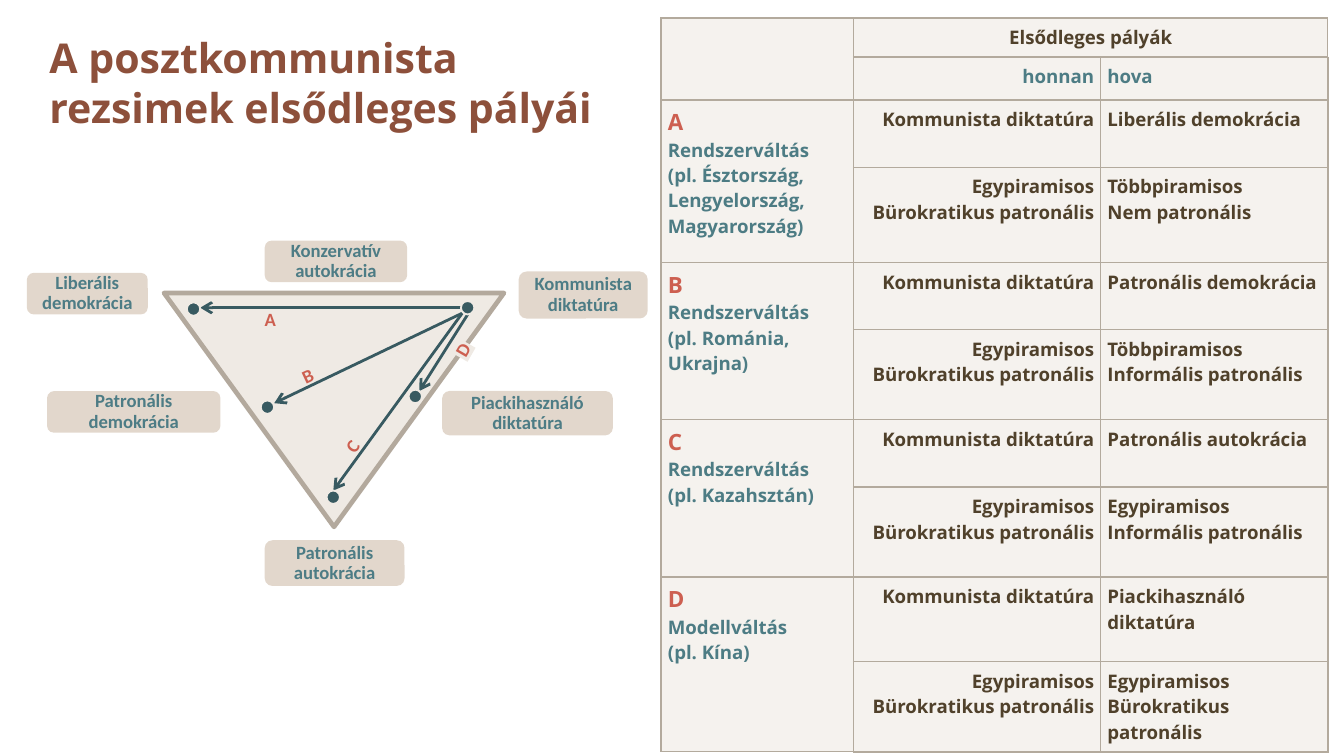
"""Build the slide on the primary trajectories of post-communist regimes."""
from dataclasses import dataclass

from lxml import etree
from pptx import Presentation
from pptx.dml.color import RGBColor
from pptx.enum.shapes import MSO_CONNECTOR, MSO_SHAPE
from pptx.enum.text import MSO_ANCHOR, PP_ALIGN
from pptx.oxml.ns import qn
from pptx.util import Emu, Inches, Pt

LEFT, CENTER, RIGHT = PP_ALIGN.LEFT, PP_ALIGN.CENTER, PP_ALIGN.RIGHT
TOP, MIDDLE = MSO_ANCHOR.TOP, MSO_ANCHOR.MIDDLE
STRAIGHT = MSO_CONNECTOR.STRAIGHT
TRIANGLE, RECTANGLE = MSO_SHAPE.ISOSCELES_TRIANGLE, MSO_SHAPE.RECTANGLE
ROUNDED, OVAL = MSO_SHAPE.ROUNDED_RECTANGLE, MSO_SHAPE.OVAL

COLORS = {
    "title": "8D503B", "sand": "EFEAE4", "edge": "B3A99D", "border": "B3AA9D",
    "label": "C7B09A", "label_text": "4D7C85", "teal": "4D7C84",
    "brown": "50412B", "red": "CD5F50", "arrow": "385A61",
}
SLIDE_WIDTH = Inches(10)
SLIDE_HEIGHT = Emu(SLIDE_WIDTH * 9 // 16)
GRID_COLUMNS, GRID_ROWS = 100, 56.25
DOT_SIZE = 1
TABLE_COLUMNS = (14.3, 18.4, 16.9)
TABLE_ROWS = (2.9, 3.2, 5, 7.1, 5, 6.7, 5, 6.7, 6.3, 6.7)


@dataclass(frozen=True)
class Area:
    column: float
    row: float
    columns: float
    rows: float

    def emu(self) -> tuple[Emu, Emu, Emu, Emu]:
        return across(self.column), down(self.row), across(self.columns), down(self.rows)


@dataclass(frozen=True)
class Line:
    text: str
    color: str
    size: float = 10
    font: str = "Open Sans"


@dataclass(frozen=True)
class Label:
    text: str
    area: Area


@dataclass(frozen=True)
class Arrow:
    start: tuple[float, float]
    end: tuple[float, float]


@dataclass(frozen=True)
class Letter:
    text: str
    area: Area
    rotation: float = 0
    backed: bool = False


@dataclass(frozen=True)
class Path:
    letter: str
    change: str
    example: str
    regime: str
    patronal: tuple[str, str]


LABELS = (
    Label("Kommunista diktatúra", Area(38.6, 20.2, 9.6, 3.5)),
    Label("Liberális demokrácia", Area(2, 20.3, 9, 3.1)),
    Label("Patronális autokrácia", Area(19.7, 40.2, 10.4, 3.4)),
    Label("Konzervatív autokrácia", Area(19.7, 17.9, 10.6, 3.1)),
    Label("Piackihasználó diktatúra", Area(32.9, 29.1, 12.7, 3.3)),
    Label("Patronális demokrácia", Area(3.5, 29.1, 12.9, 3.1)),
)
ARROWS = (
    Arrow((34.4, 23.3), (24.8, 36.5)),
    Arrow((34.8, 23.4), (31.2, 29.1)),
    Arrow((34.3, 22.9), (14.9, 22.9)),
    Arrow((34.4, 23.3), (20.4, 30)),
)
LETTERS = (
    Letter("A", Area(19.7, 22.9, 1.6, 1.7)),
    Letter("B", Area(22.4, 26.8, 2.2, 1.6), 334.8),
    Letter("C", Area(25.2, 31.9, 2.2, 0.9), 305.7),
    Letter("D", Area(33.8, 25.2, 1.2, 1.6), 299.9, True),
)
DOTS = ((13.9, 22.5), (19.4, 29.8), (24.3, 36.5), (34.3, 22.4), (30.4, 29))
PATHS = (
    Path("A", "Rendszerváltás", "(pl. Észtország, Lengyelország, Magyarország)",
         "Liberális demokrácia", ("Többpiramisos", "Nem patronális")),
    Path("B", "Rendszerváltás", "(pl. Románia, Ukrajna)",
         "Patronális demokrácia", ("Többpiramisos", "Informális patronális")),
    Path("C", "Rendszerváltás", "(pl. Kazahsztán)",
         "Patronális autokrácia", ("Egypiramisos", "Informális patronális")),
    Path("D", "Modellváltás", "(pl. Kína)",
         "Piackihasználó diktatúra", ("Egypiramisos", "Bürokratikus patronális")),
)
ORIGIN = ("Egypiramisos", "Bürokratikus patronális")


def across(columns: float) -> Emu:
    return Emu(round(SLIDE_WIDTH * columns / GRID_COLUMNS))


def down(rows: float) -> Emu:
    return Emu(round(SLIDE_HEIGHT * rows / GRID_ROWS))


def rgb(name: str) -> RGBColor:
    return RGBColor.from_string(COLORS[name])


def paint(fill, color: str, opacity: int = 100) -> None:
    fill.solid()
    fill.fore_color.rgb = rgb(color)
    if opacity < 100:
        tint = fill._xPr.find(qn("a:solidFill"))[0]
        etree.SubElement(tint, qn("a:alpha"), val=str(opacity * 1000))


def write(frame, lines: list[Line], align=LEFT, spacing: float = 1) -> None:
    for index, line in enumerate(lines):
        para = frame.add_paragraph() if index else frame.paragraphs[0]
        para.alignment, para.line_spacing = align, spacing
        span = para.add_run()
        span.text = line.text
        span.font.name, span.font.size = line.font, Pt(line.size)
        span.font.bold, span.font.color.rgb = True, rgb(line.color)


def prepare(frame, inset: float, anchor) -> None:
    frame.word_wrap, frame.vertical_anchor = True, anchor
    frame.margin_left = frame.margin_right = across(inset)
    frame.margin_top = frame.margin_bottom = down(inset)


def add_shape(page, kind, area: Area, fill: str, opacity: int = 100,
              line: str = "", width: float = 1):
    shape = page.shapes.add_shape(kind, *area.emu())
    shape.shadow.inherit = False
    paint(shape.fill, fill, opacity)
    if line:
        shape.line.color.rgb, shape.line.width = rgb(line), Pt(width)
    else:
        shape.line.fill.background()
    return shape


def add_label(page, label: Label) -> None:
    box = add_shape(page, ROUNDED, label.area, "label", 50)
    prepare(box.text_frame, 0.4, MIDDLE)
    write(box.text_frame, [Line(label.text, "label_text", font="Calibri")], CENTER, 0.9)


def add_arrow(page, arrow: Arrow) -> None:
    (x1, y1), (x2, y2) = arrow.start, arrow.end
    link = page.shapes.add_connector(STRAIGHT, across(x1), down(y1), across(x2), down(y2))
    link.line.color.rgb, link.line.width = rgb("arrow"), Pt(1.5)
    etree.SubElement(link.line._get_or_add_ln(), qn("a:tailEnd"), type="arrow")
    etree.SubElement(link._element.spPr, qn("a:effectLst"))


def add_letter(page, letter: Letter) -> None:
    if letter.backed:
        box = add_shape(page, RECTANGLE, letter.area, "sand")
    else:
        box = page.shapes.add_textbox(*letter.area.emu())
    box.rotation = letter.rotation
    prepare(box.text_frame, 0, MIDDLE if letter.backed else TOP)
    write(box.text_frame, [Line(letter.text, "red", font="Calibri")],
          CENTER if letter.backed else LEFT)


def style_cell(cell, row: int, column: int) -> None:
    cell.margin_left = cell.margin_right = across(0.5)
    cell.margin_top = cell.margin_bottom = down(0.5)
    outer = {"lnL": column == 0, "lnR": column == len(TABLE_COLUMNS) - 1,
             "lnT": row == 0, "lnB": row == len(TABLE_ROWS) - 1}
    properties = cell._tc.get_or_add_tcPr()
    for side, is_outer in outer.items():
        edge = etree.SubElement(properties, qn(f"a:{side}"), w=str(Pt(1 if is_outer else 0.75)))
        solid = etree.SubElement(edge, qn("a:solidFill"))
        etree.SubElement(solid, qn("a:srgbClr"), val=COLORS["border"])
    paint(cell.fill, "sand", 60)


def add_path_rows(table, row: int, path: Path) -> None:
    table.cell(row, 0).merge(table.cell(row + 1, 0))
    write(table.cell(row, 0).text_frame, [
        Line(path.letter, "red", 12), Line(path.change, "teal"), Line(path.example, "teal")])
    pairs = ((("Kommunista diktatúra",), (path.regime,)), (ORIGIN, path.patronal))
    for offset, pair in enumerate(pairs):
        for column, (texts, align) in enumerate(zip(pair, (RIGHT, LEFT)), start=1):
            lines = [Line(text, "brown") for text in texts]
            write(table.cell(row + offset, column).text_frame, lines, align)


def add_path_table(page) -> None:
    area = Area(49.2, 1.35, sum(TABLE_COLUMNS), sum(TABLE_ROWS))
    table = page.shapes.add_table(len(TABLE_ROWS), len(TABLE_COLUMNS), *area.emu()).table
    table.first_row = table.horz_banding = False
    for column, width in enumerate(TABLE_COLUMNS):
        table.columns[column].width = across(width)
    for row, height in enumerate(TABLE_ROWS):
        table.rows[row].height = down(height)
        for column in range(len(TABLE_COLUMNS)):
            style_cell(table.cell(row, column), row, column)
    table.cell(0, 0).merge(table.cell(1, 0))
    corner = table.cell(0, 0).text_frame.paragraphs[0]
    etree.SubElement(corner._p, qn("a:endParaRPr"), sz="1000")
    table.cell(0, 1).merge(table.cell(0, 2))
    write(table.cell(0, 1).text_frame, [Line("Elsődleges pályák", "brown")], CENTER)
    write(table.cell(1, 1).text_frame, [Line("honnan", "teal")], RIGHT)
    write(table.cell(1, 2).text_frame, [Line("hova", "teal")])
    for index, path in enumerate(PATHS):
        add_path_rows(table, 2 + 2 * index, path)


def main() -> None:
    deck = Presentation()
    deck.slide_width, deck.slide_height = SLIDE_WIDTH, SLIDE_HEIGHT
    page = deck.slides.add_slide(deck.slide_layouts[6])
    triangle = add_shape(page, TRIANGLE, Area(12.2, 21.8, 25.3, 17.4), "sand", 100, "edge", 2.5)
    triangle.rotation = 180
    for label in LABELS:
        add_label(page, label)
    title = page.shapes.add_textbox(*Area(2.7, 1.4, 45.7, 9.4).emu())
    prepare(title.text_frame, 1, MIDDLE)
    write(title.text_frame, [Line("A posztkommunista rezsimek elsődleges pályái", "title", 22)])
    add_path_table(page)
    for arrow in ARROWS:
        add_arrow(page, arrow)
    for letter in LETTERS:
        add_letter(page, letter)
    for column, row in DOTS:
        add_shape(page, OVAL, Area(column, row, DOT_SIZE, DOT_SIZE), "arrow", 100, "sand")
    deck.save("out.pptx")


if __name__ == "__main__":
    main()
